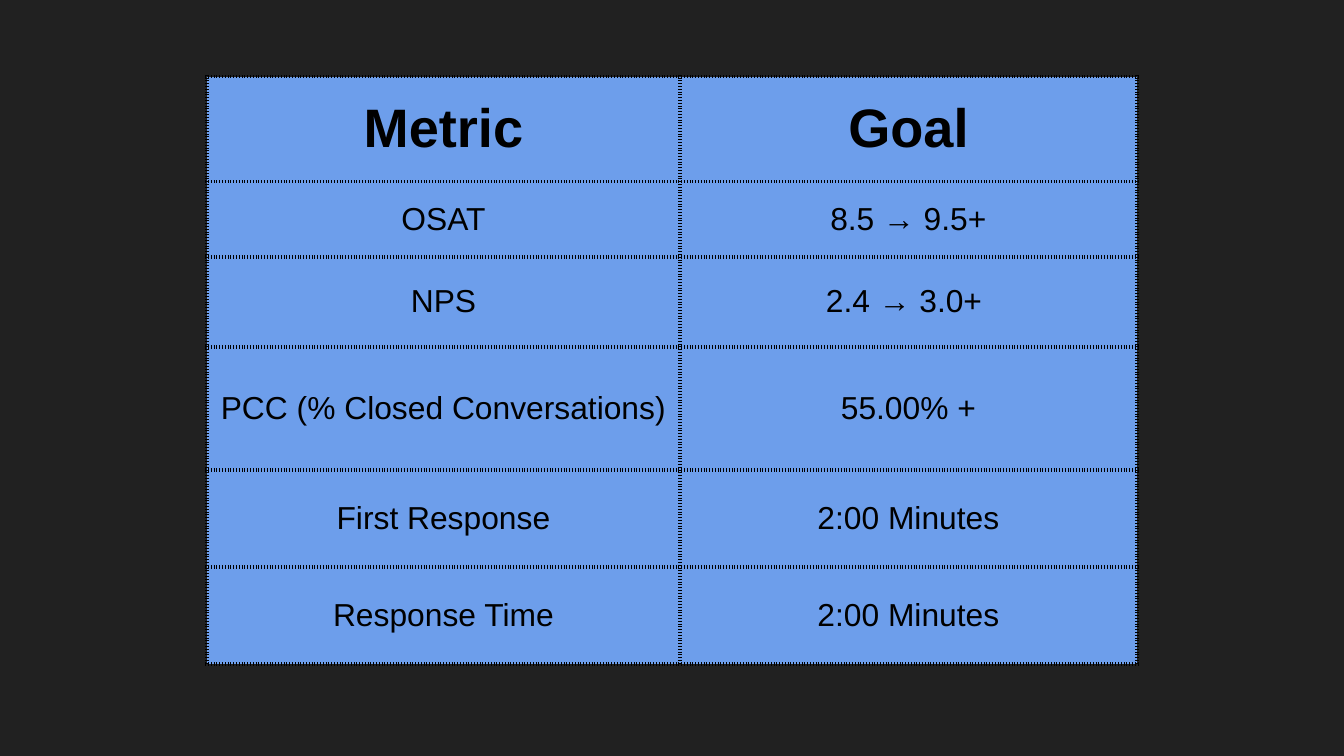
"""Build a slide with a table of support metrics and their goals."""
from lxml import etree
from pptx import Presentation
from pptx.dml.color import RGBColor
from pptx.enum.text import MSO_ANCHOR, PP_ALIGN
from pptx.oxml.ns import qn
from pptx.util import Inches, Pt

CENTER = PP_ALIGN.CENTER
MIDDLE = MSO_ANCHOR.MIDDLE
COLORS = {"background": "212121", "cell": "6D9EEB", "ink": "000000"}
FONT = "Arial"
MARGIN = Inches(0.07)
COL_WIDTHS = [3.52, 3.4]
ROW_HEIGHTS = [0.78, 0.56, 0.67, 0.92, 0.72, 0.72]
ROWS = [
    ("Metric", "Goal"),
    ("OSAT", "8.5 → 9.5+"),
    ("NPS", "2.4 → 3.0+ "),
    ("PCC (% Closed Conversations)", "55.00% +"),
    ("First Response", "2:00 Minutes"),
    ("Response Time", "2:00 Minutes"),
]


def add_borders(cell):
    tc_pr = cell._tc.get_or_add_tcPr()
    for side in ("lnL", "lnR", "lnT", "lnB"):
        ln = etree.SubElement(tc_pr, qn(f"a:{side}"), w=str(Pt(2.25)))
        fill = etree.SubElement(ln, qn("a:solidFill"))
        etree.SubElement(fill, qn("a:srgbClr"), val=COLORS["ink"])
        etree.SubElement(ln, qn("a:prstDash"), val="dot")


prs = Presentation()
prs.slide_width = Inches(10)
prs.slide_height = Inches(10) * 9 // 16
s = prs.slides.add_slide(prs.slide_layouts[6])
s.background.fill.solid()
s.background.fill.fore_color.rgb = RGBColor.from_string(COLORS["background"])

table = s.shapes.add_table(
    len(ROWS), len(COL_WIDTHS), Inches(1.54), Inches(0.57),
    Inches(sum(COL_WIDTHS)), Inches(sum(ROW_HEIGHTS)),
).table
table.horz_banding = False
for col, width in zip(table.columns, COL_WIDTHS):
    col.width = Inches(width)
for row, height in zip(table.rows, ROW_HEIGHTS):
    row.height = Inches(height)

for i, texts in enumerate(ROWS):
    for j, text in enumerate(texts):
        cell = table.cell(i, j)
        add_borders(cell)
        cell.fill.solid()
        cell.fill.fore_color.rgb = RGBColor.from_string(COLORS["cell"])
        cell.vertical_anchor = MIDDLE
        cell.margin_left = cell.margin_right = MARGIN
        cell.margin_top = cell.margin_bottom = MARGIN
        p = cell.text_frame.paragraphs[0]
        p.text = text
        p.alignment = CENTER
        font = p.runs[0].font
        font.name = FONT
        font.size = Pt(29 if i == 0 else 17)
        font.bold = i == 0
        font.color.rgb = RGBColor.from_string(COLORS["ink"])

prs.save("out.pptx")
